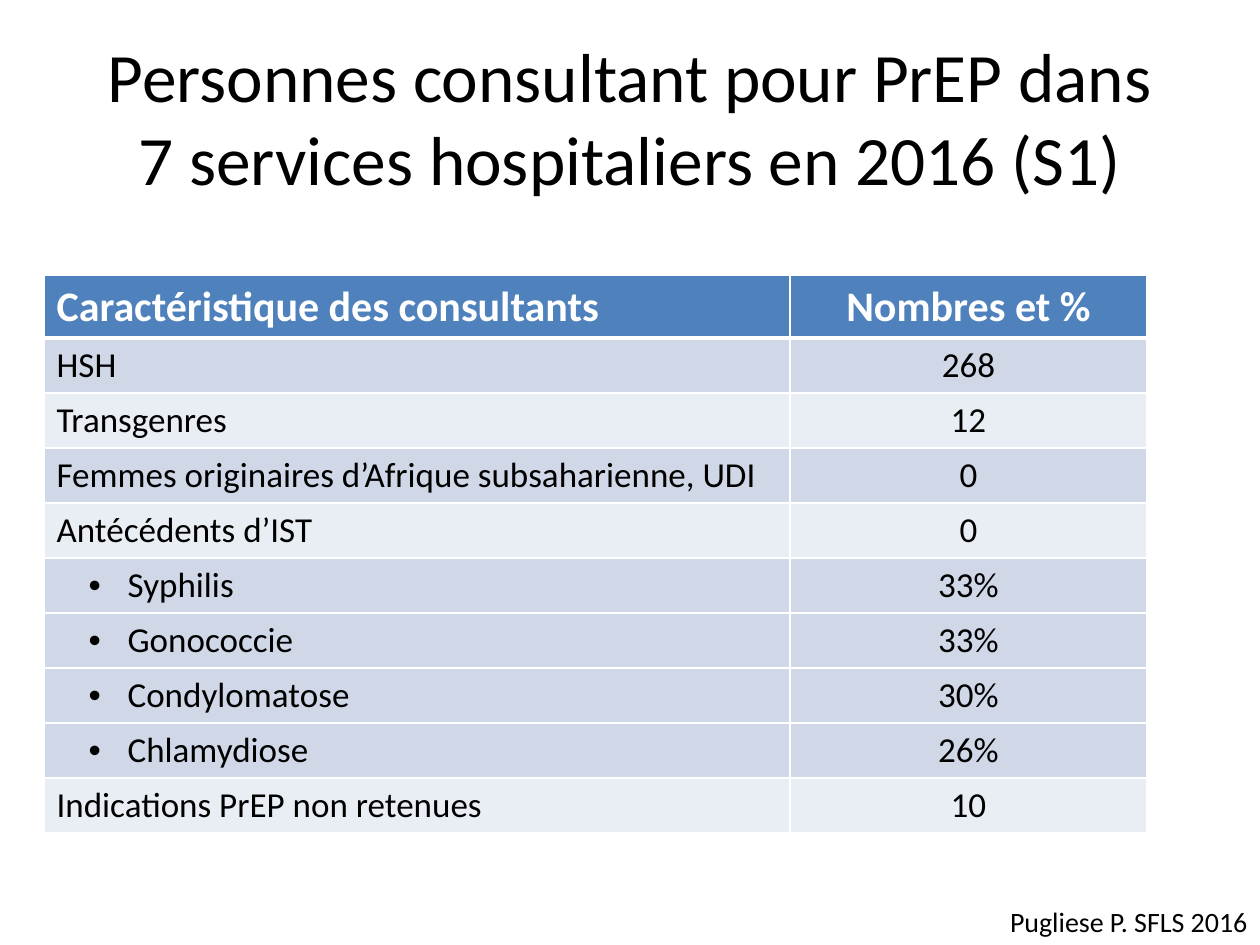
from dataclasses import dataclass

from lxml import etree
from pptx import Presentation
from pptx.dml.color import RGBColor
from pptx.enum.text import MSO_ANCHOR, PP_ALIGN
from pptx.oxml.ns import qn
from pptx.util import Pt

LEFT, MID, RIGHT = PP_ALIGN.LEFT, PP_ALIGN.CENTER, PP_ALIGN.RIGHT
TOP, CENTRE = MSO_ANCHOR.TOP, MSO_ANCHOR.MIDDLE
SCALE = 914400 / 126  # EMU in one px
FONT = "Calibri"
COLOR = {"ink": "000000", "white": "FFFFFF", "head": "4F81BD",
         "dark": "D0D8E8", "pale": "E9EDF4"}


@dataclass(frozen=True)
class Row:
    label: str
    value: str
    fill: str = "dark"
    sub: bool = False


ROWS = [
    Row("Caractéristique des consultants", "Nombres et %", "head"),
    Row("HSH", "268"),
    Row("Transgenres", "12", "pale"),
    Row("Femmes originaires d’Afrique subsaharienne, UDI", "0"),
    Row("Antécédents d’IST", "0", "pale"),
    Row("Syphilis", "33%", sub=True),
    Row("Gonococcie", "33%", sub=True),
    Row("Condylomatose", "30%", sub=True),
    Row("Chlamydiose", "26%", sub=True),
    Row("Indications PrEP non retenues", "10", "pale"),
]
COLS = (746, 357)
HEAD, BODY = 63, 55  # row heights


def px(n: int) -> int:
    return round(n * SCALE)


def write(frame, text: str, *, size: float = 20, color: str = "ink",
          bold: bool = False, align=LEFT):
    """Fill a text frame with one paragraph; \\v breaks the line."""
    para = frame.paragraphs[0]
    para.text = text
    para.alignment = align
    for run in para.runs:
        font = run.font
        font.name, font.size, font.bold = FONT, Pt(size), bold
        font.color.rgb = RGBColor.from_string(COLOR[color])
    return para


def label(slide, box: tuple[int, ...], text: str, *, wrap: bool = True,
          anchor=TOP, **style) -> None:
    frame = slide.shapes.add_textbox(*map(px, box)).text_frame
    frame.word_wrap = wrap
    frame.vertical_anchor = anchor
    write(frame, text, **style)


def bullet(para) -> None:
    props = para._p.get_or_add_pPr()
    props.set("lvl", "1")
    props.set("marL", str(px(71)))
    props.set("indent", str(px(-39)))
    etree.SubElement(props, qn("a:buFont")).set("typeface", "Arial")
    etree.SubElement(props, qn("a:buChar")).set("char", "•")


def border(cell, **widths: int) -> None:
    props = cell._tc.get_or_add_tcPr()
    for side in "LRTB":
        line = etree.SubElement(props, qn(f"a:ln{side}"))
        line.set("w", str(Pt(widths.get(side, 1))))
        fill = etree.SubElement(line, qn("a:solidFill"))
        etree.SubElement(fill, qn("a:srgbClr")).set("val", COLOR["white"])


def grid(slide, left: int, top: int, rows: list[Row]) -> None:
    high = HEAD + BODY * (len(rows) - 1)
    table = slide.shapes.add_table(len(rows), len(COLS), px(left), px(top),
                                   px(sum(COLS)), px(high)).table
    for col, wide in zip(table.columns, COLS):
        col.width = px(wide)
    for i, row in enumerate(rows):
        first = i == 0
        table.rows[i].height = px(HEAD if first else BODY)
        style = {"size": 24, "color": "white", "bold": True} if first else {}
        # A thick rule parts the header from the body
        rule = {0: {"B": 3}, 1: {"T": 3}}.get(i, {})
        for j, (text, align) in enumerate(((row.label, LEFT), (row.value, MID))):
            cell = table.cell(i, j)
            border(cell, **rule)
            cell.fill.solid()
            cell.fill.fore_color.rgb = RGBColor.from_string(COLOR[row.fill])
            para = write(cell.text_frame, text, align=align, **style)
            if row.sub and j == 0:
                bullet(para)


def main() -> None:
    deck = Presentation()
    deck.slide_width, deck.slide_height = px(1260), px(945)
    slide = deck.slides.add_slide(deck.slide_layouts[6])

    # Title
    label(slide, (63, 38, 1134, 157),
          "Personnes consultant pour PrEP dans\v7 services hospitaliers en 2016 (S1)",
          size=39.6, align=MID, anchor=CENTRE)

    # Table of patients
    grid(slide, 44, 275, ROWS)

    # Source
    label(slide, (994, 898, 266, 47), "Pugliese P. SFLS 2016",
          size=16, align=RIGHT, wrap=False)

    deck.save("out.pptx")


if __name__ == "__main__":
    main()
